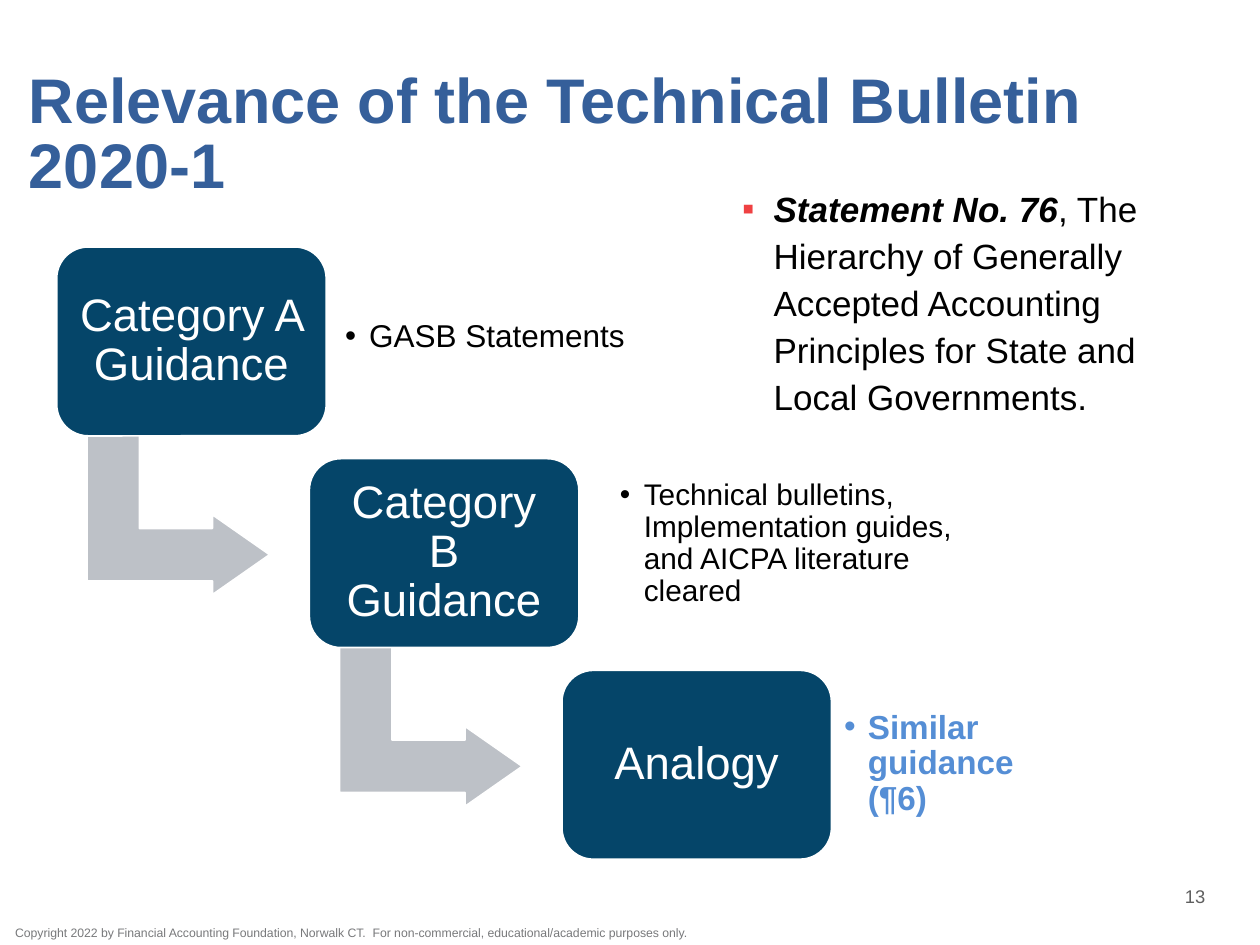
import pptx
import pptx.util
import pptx.dml.color
import pptx.enum.shapes
import pptx.enum.text
import pptx.oxml.ns
from lxml import etree

Inches = pptx.util.Inches
Align = pptx.enum.text.PP_ALIGN
Anchor = pptx.enum.text.MSO_ANCHOR
Shapes = pptx.enum.shapes.MSO_SHAPE

COLORS = {
    "title": "355F9A", "box": "054569", "arrow": "BDC1C7", "white": "FFFFFF",
    "black": "000000", "bullet": "EF4142", "accent": "558ED5",
    "number": "5F5F5F", "copyright": "78797B",
}

TITLE = "Relevance of the Technical Bulletin 2020-1"
STATEMENT = [
    ("Statement No. 76", True),
    (", The Hierarchy of Generally Accepted Accounting Principles for State and Local Governments.", False),
]
LEVELS = [
    {"label": "Category A Guidance", "detail": "GASB Statements",
     "place": (2.67, 2.07, 2.54, 1.21), "inset": 0.07, "size": 18},
    {"label": "Category B Guidance",
     "detail": "Technical bulletins, Implementation guides, and AICPA literature cleared",
     "place": (4.83, 3.71, 2.84, 1.21), "inset": 0.09, "size": 17},
    {"label": "Analogy", "detail": "Similar guidance (¶6)",
     "place": (6.6, 5.46, 1.55, 1.21), "inset": 0.1, "size": 19,
     "color": "accent", "bold": True},
]
PAGE_NUMBER = "13"
COPYRIGHT = ("Copyright 2022 by Financial Accounting Foundation, Norwalk CT.  "
             "For non-commercial, educational/academic purposes only.")

FIRST_BOX = (0.45, 1.96)
BOX_SIZE = (2.14, 1.5)
STEP = (2.005, 1.68)
ARROW_OFFSET = (0.33, 1.4)
ARROW_SIZE = (1.27, 1.45)


def rgb(name):
    return pptx.dml.color.RGBColor.from_string(COLORS[name])


def place(shape, left, top, width, height):
    shape.left, shape.top = Inches(left), Inches(top)
    shape.width, shape.height = Inches(width), Inches(height)


def add_bullet(paragraph, char, indent, hanging, color):
    props = paragraph._p.get_or_add_pPr()
    props.set("marL", str(Inches(indent)))
    props.set("indent", str(-Inches(hanging)))
    qn = pptx.oxml.ns.qn
    bullet_color = etree.SubElement(props, qn("a:buClr"))
    etree.SubElement(bullet_color, qn("a:srgbClr"), val=COLORS[color])
    etree.SubElement(props, qn("a:buFont"), typeface="Arial")
    etree.SubElement(props, qn("a:buChar"), char=char)


def write(shape, text, *, size, color="black", bold=False, align=Align.LEFT,
          anchor=Anchor.MIDDLE, insets=(0.1, 0.05, 0.1, 0.05), spacing=None, bullet=None):
    frame = shape.text_frame
    frame.word_wrap = True
    frame.auto_size = pptx.enum.text.MSO_AUTO_SIZE.NONE
    frame.vertical_anchor = anchor
    (frame.margin_left, frame.margin_top,
     frame.margin_right, frame.margin_bottom) = map(Inches, insets)
    paragraph = frame.paragraphs[0]
    if bullet:
        add_bullet(paragraph, *bullet)
    paragraph.alignment = align
    paragraph.space_before = pptx.util.Pt(0)
    if spacing:
        paragraph.line_spacing = spacing
    runs = [(text, False)] if isinstance(text, str) else text
    for words, emphasis in runs:
        run = paragraph.add_run()
        run.text = words
        run.font.name = "Arial"
        run.font.size = pptx.util.Pt(size)
        run.font.bold = bold or emphasis
        run.font.italic = emphasis
        run.font.color.rgb = rgb(color)


def add_block(slide, kind, bounds, fill):
    block = slide.shapes.add_shape(kind, *map(Inches, bounds))
    block.shadow.inherit = False
    block.fill.solid()
    block.fill.fore_color.rgb = rgb(fill)
    block.line.color.rgb = rgb("white")
    block.line.width = pptx.util.Pt(1)
    return block


def add_text(slide, bounds, text, **style):
    write(slide.shapes.add_textbox(*map(Inches, bounds)), text, **style)


def add_level(slide, index, level):
    left, top = (start + index * step for start, step in zip(FIRST_BOX, STEP))
    if index < len(LEVELS) - 1:
        corner = (left + ARROW_OFFSET[0], top + ARROW_OFFSET[1])
        arrow = add_block(slide, Shapes.BENT_UP_ARROW, corner + ARROW_SIZE, "arrow")
        arrow.rotation = 90
        for position, value in enumerate((0.328, 0.25, 0.358)):
            arrow.adjustments[position] = value
    box = add_block(slide, Shapes.ROUNDED_RECTANGLE, (left, top) + BOX_SIZE, "box")
    box.adjustments[0] = 0.167
    write(box, level["label"], size=26, color="white", align=Align.CENTER,
          insets=(0.11,) * 4, spacing=0.9)
    color = level.get("color", "black")
    add_text(slide, level["place"], level["detail"], size=level["size"], color=color,
             bold=level.get("bold", False), insets=(level["inset"],) * 4, spacing=0.9,
             bullet=("•", 0.19, 0.19, color))


def main():
    deck = pptx.Presentation()
    deck.slide_width, deck.slide_height = Inches(10), Inches(7.5)
    slide = deck.slides.add_slide(deck.slide_layouts[1])

    add_text(slide, (0.12, 7.34, 5.43, 0.14), COPYRIGHT, size=7, color="copyright",
             anchor=Anchor.TOP, insets=(0,) * 4)
    title, statement = slide.shapes.title, slide.placeholders[1]
    place(statement, 5.78, 1.4, 3.97, 2.01)
    write(statement, STATEMENT, size=20, anchor=Anchor.TOP, spacing=1.12,
          bullet=("▪", 0.26, 0.25, "bullet"))
    place(title, 0.13, 0.59, 9.49, 0.98)
    write(title, TITLE, size=36, color="title", bold=True,
          insets=(0.1, 0, 0, 0), spacing=pptx.util.Pt(37))
    add_text(slide, (8.97, 6.95, 1.03, 0.33), PAGE_NUMBER, size=10.5, color="number",
             align=Align.CENTER)
    for index, level in enumerate(LEVELS):
        add_level(slide, index, level)

    deck.save("out.pptx")


if __name__ == "__main__":
    main()
